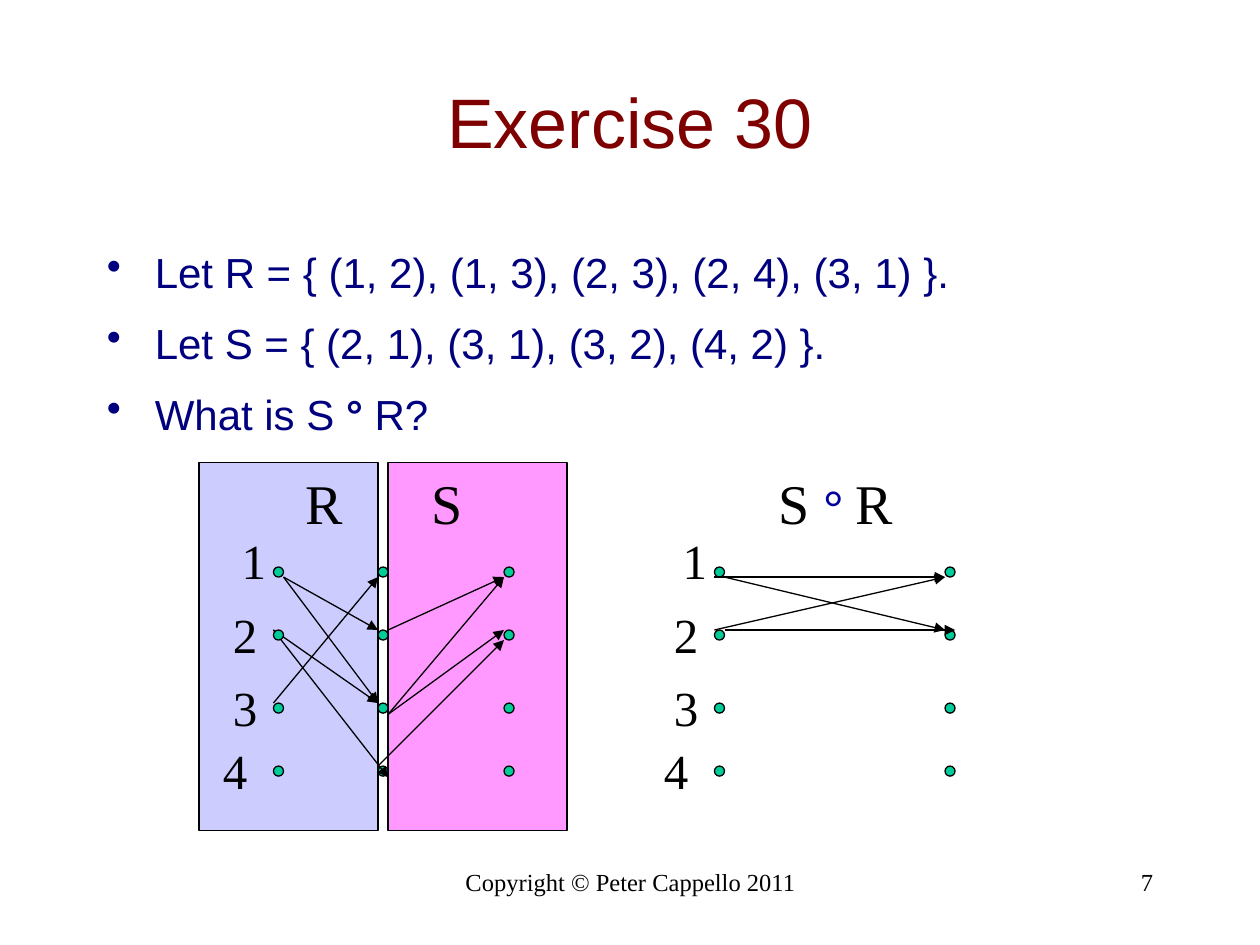
from lxml import etree
from pptx import Presentation
from pptx.dml.color import RGBColor
from pptx.enum.shapes import MSO_CONNECTOR, MSO_SHAPE
from pptx.enum.text import MSO_ANCHOR, PP_ALIGN
from pptx.oxml.ns import qn
from pptx.util import Inches, Pt

LEFT, CENTER, RIGHT = PP_ALIGN.LEFT, PP_ALIGN.CENTER, PP_ALIGN.RIGHT
TOP, MIDDLE = MSO_ANCHOR.TOP, MSO_ANCHOR.MIDDLE
RECTANGLE, OVAL = MSO_SHAPE.RECTANGLE, MSO_SHAPE.OVAL
STRAIGHT = MSO_CONNECTOR.STRAIGHT

BLACK = RGBColor(0x00, 0x00, 0x00)
MAROON = RGBColor(0x7F, 0x00, 0x00)
NAVY = RGBColor(0x00, 0x00, 0x7F)
BLUE = RGBColor(0x00, 0x00, 0x9F)
GREEN = RGBColor(0x00, 0xCC, 0x99)
PINK = RGBColor(0xFF, 0x99, 0xFF)
LAVENDER = RGBColor(0xCC, 0xCC, 0xFF)
SANS, SERIF = "Arial", "Times New Roman"

TITLE = "Exercise 30"
# Each bullet is a list of (text, bold) runs
BULLETS = [
    [("Let R = { (1, 2), (1, 3), (2, 3), (2, 4), (3, 1) }.", False)],
    [("Let S = { (2, 1), (3, 1), (3, 2), (4, 2) }.", False)],
    [("What is S ", False), ("°", True), (" R?", False)],
]
FOOTER, PAGE_NUMBER = "Copyright © Peter Cappello 2011", "7"

PANELS = [(3.08, PINK), (1.58, LAVENDER)]
DOT_SIZE = 0.08
DOT_ROWS = [4.5, 5, 5.58, 6.08]
# Element labels: text, offset from the left edge of the diagram, top
ELEMENTS = [("1", 0.15, 4.16), ("2", 0.08, 4.75), ("3", 0.08, 5.33), ("4", 0, 5.83)]
ELEMENT_LEFTS = [1.67, 5.17]
HEADINGS = [
    (2.33, 0.5, [("R", 32, BLACK, False)]),
    (3.33, 0.45, [("S", 32, BLACK, False)]),
    (6.08, 1.11, [("S ", 32, BLACK, False), ("° ", 28, BLUE, True),
                  ("R", 32, BLACK, False)]),
]
# Back to front: dot columns, then the arrows (x1, y1, x2, y2) over them
RELATIONS = [
    ([3, 4], [(2.25, 4.58, 3, 5), (2.25, 4.58, 3, 5.58), (2.17, 5, 3, 5.58),
              (2.17, 5, 3.08, 6.17), (2.17, 5.58, 3, 4.58)]),
    ([2.17], [(3.08, 5, 4, 4.58), (3.08, 5.67, 4, 4.58),
              (3.08, 5.67, 4, 5), (3, 6.08, 4, 5.08)]),
    ([7.5, 5.67], [(5.67, 4.58, 7.5, 4.58), (5.75, 5, 7.58, 5),
                   (5.67, 5, 7.5, 4.58), (5.75, 4.58, 7.5, 5)]),
]


def add_text_box(slide, box, anchor=TOP, wrap=True):
    frame = slide.shapes.add_textbox(*map(Inches, box)).text_frame
    frame.word_wrap = wrap
    frame.vertical_anchor = anchor
    return frame


def add_run(paragraph, text, size, font, color, bold=False):
    run = paragraph.add_run()
    run.text = text
    run.font.size = Pt(size)
    run.font.name = font
    run.font.color.rgb = color
    run.font.bold = bold


def add_line_of_text(slide, box, text, size, font, color, align=LEFT, **frame_options):
    paragraph = add_text_box(slide, box, **frame_options).paragraphs[0]
    paragraph.alignment = align
    add_run(paragraph, text, size, font, color)


def add_bullet(paragraph, indent):
    properties = paragraph._p.get_or_add_pPr()
    properties.set("marL", str(Inches(indent)))
    properties.set("indent", str(-Inches(indent)))
    etree.SubElement(properties, qn("a:buChar")).set("char", "•")


def add_filled_shape(slide, kind, box, fill):
    shape = slide.shapes.add_shape(kind, *map(Inches, box))
    shape.shadow.inherit = False
    shape.fill.solid()
    shape.fill.fore_color.rgb = fill
    shape.line.color.rgb = BLACK
    shape.line.width = Pt(0.75)


def add_arrow(slide, ends):
    arrow = slide.shapes.add_connector(STRAIGHT, *map(Inches, ends))
    arrow.line.color.rgb = BLACK
    arrow.line.width = Pt(0.75)
    etree.SubElement(arrow.line._get_or_add_ln(), qn("a:tailEnd")).set("type", "triangle")
    etree.SubElement(arrow._element.spPr, qn("a:effectLst"))


def main():
    presentation = Presentation()
    presentation.slide_width, presentation.slide_height = Inches(10), Inches(7.5)
    slide = presentation.slides.add_slide(presentation.slide_layouts[6])

    add_line_of_text(slide, (3.42, 6.83, 3.17, 0.5), FOOTER, 14, SERIF, BLACK, CENTER)
    add_line_of_text(slide, (7.17, 6.83, 2.08, 0.5), PAGE_NUMBER, 14, SERIF, BLACK, RIGHT)
    for left, fill in PANELS:
        add_filled_shape(slide, RECTANGLE, (left, 3.67, 1.42, 2.92), fill)
    add_line_of_text(slide, (0.75, 0.33, 8.5, 1.25), TITLE, 40, SANS, MAROON, CENTER,
                     anchor=MIDDLE)

    body = add_text_box(slide, (0.75, 1.83, 9.08, 4.83))
    for index, runs in enumerate(BULLETS):
        paragraph = body.add_paragraph() if index else body.paragraphs[0]
        paragraph.line_spacing = 1.2
        paragraph.space_before = Pt(6)
        add_bullet(paragraph, 0.38)
        for text, bold in runs:
            add_run(paragraph, text, 24, SANS, NAVY, bold)

    for diagram_left in ELEMENT_LEFTS:
        for text, offset, top in ELEMENTS:
            add_line_of_text(slide, (diagram_left + offset, top, 0.4, 0.57),
                             text, 28, SERIF, BLACK, wrap=False)
    for left, width, runs in HEADINGS:
        frame = add_text_box(slide, (left, 3.67, width, 0.63), wrap=False)
        for text, size, color, bold in runs:
            add_run(frame.paragraphs[0], text, size, SERIF, color, bold)

    for columns, arrows in RELATIONS:
        for left in columns:
            for top in DOT_ROWS:
                add_filled_shape(slide, OVAL, (left, top, DOT_SIZE, DOT_SIZE), GREEN)
        for ends in arrows:
            add_arrow(slide, ends)

    presentation.save("out.pptx")


if __name__ == "__main__":
    main()
